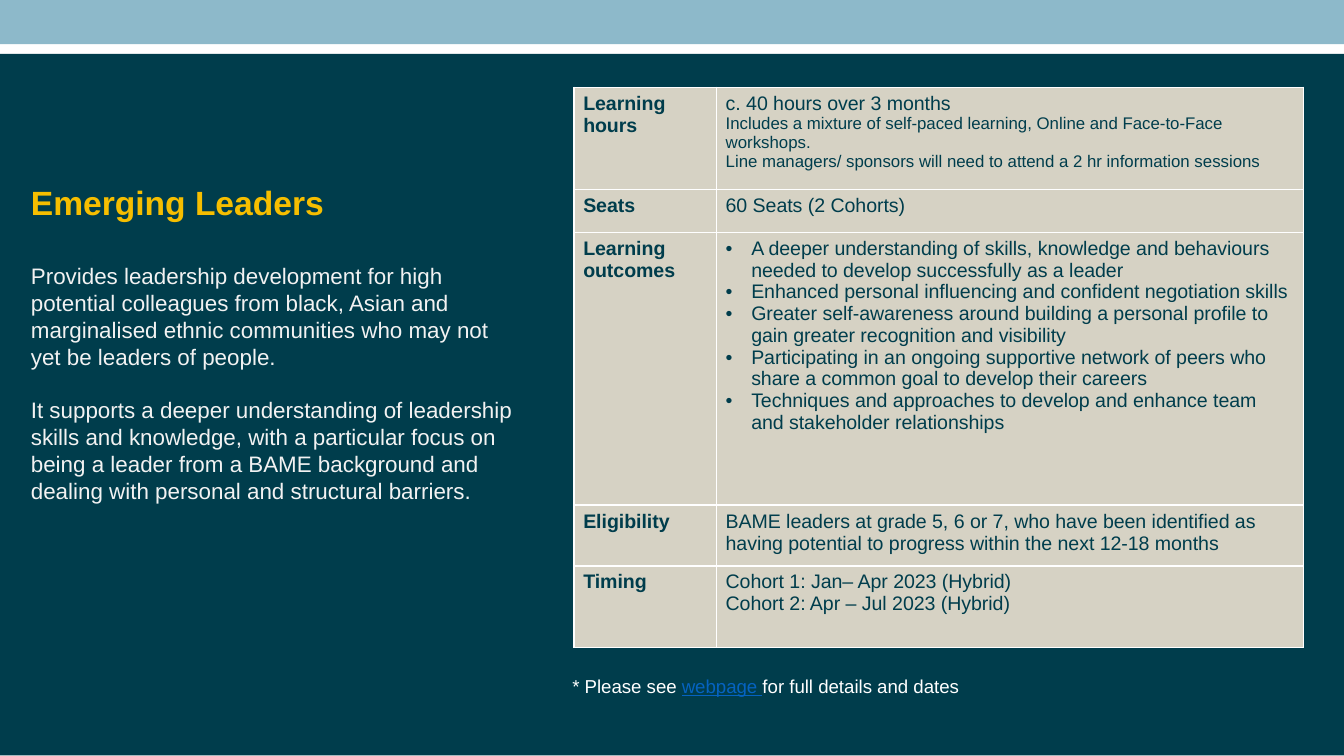
"""Build the Emerging Leaders programme slide."""
from dataclasses import dataclass

from lxml.etree import SubElement
from pptx import Presentation
from pptx.dml.color import RGBColor
from pptx.enum.shapes import MSO_SHAPE
from pptx.enum.text import MSO_ANCHOR, PP_ALIGN
from pptx.oxml.ns import qn
from pptx.util import Inches, Pt


@dataclass(frozen=True)
class Theme:
    font: str = "Arial"
    banner: str = "8DB9CA"
    navy: str = "003D4C"
    stone: str = "D6D2C4"
    gold: str = "F6BE00"
    pale: str = "F2F2F2"
    white: str = "FFFFFF"
    link: str = "0563C1"
    title_size: float = 18
    body_size: float = 12
    table_size: float = 10.5
    detail_size: float = 9
    note_size: float = 10


THEME = Theme()
TITLE = "Emerging Leaders"
DESCRIPTION = [
    "Provides leadership development for high potential colleagues from black, Asian and "
    "marginalised ethnic communities who may not yet be leaders of people.",
    "It supports a deeper understanding of leadership skills and knowledge, with a particular "
    "focus on being a leader from a BAME background and dealing with personal and structural barriers.",
]
HOURS = [
    "c. 40 hours over 3 months",
    "Includes a mixture of self-paced learning, Online and Face-to-Face workshops.",
    "Line managers/ sponsors will need to attend a 2 hr information sessions",
]
OUTCOMES = [
    "A deeper understanding of skills, knowledge and behaviours needed to develop successfully as a leader  ",
    "Enhanced personal influencing and confident negotiation skills ",
    "Greater self-awareness around building a personal profile to gain greater recognition and visibility ",
    "Participating in an ongoing supportive network of peers who share a common goal to develop their careers ",
    "Techniques and approaches to develop and enhance team and stakeholder relationships ",
]
ELIGIBILITY = [
    "BAME leaders at grade 5, 6 or 7, who have been identified as having potential to progress "
    "within the next 12-18 months"
]
TIMING = ["Cohort 1: Jan– Apr 2023 (Hybrid)\vCohort 2: Apr – Jul 2023 (Hybrid)"]
ROWS = [
    ("Learning hours", HOURS, 0.76),
    ("Seats", ["60 Seats (2 Cohorts)"], 0.32),
    ("Learning outcomes", OUTCOMES, 2.03),
    ("Eligibility", ELIGIBILITY, 0.45),
    ("Timing", TIMING, 0.61),
]
COLUMN_WIDTHS = [1.06, 4.37]
NOTE = [("* Please see ", False), ("webpage ", True), ("for full details and dates", False)]
BANDS = [((0, 0, 10, 0.33), THEME.banner), ((0, 0.4, 10, 5.22), THEME.navy)]


def style(font, size, color, bold=False):
    font.name = THEME.font
    font.size = Pt(size)
    font.bold = bold
    font.color.rgb = RGBColor.from_string(color)


def set_bullet(paragraph, indent=0.0):
    properties = paragraph._p.get_or_add_pPr()
    properties.set("marL", str(Inches(indent)))
    properties.set("indent", str(-Inches(indent)))
    if indent:
        SubElement(properties, qn("a:buFont"), typeface=THEME.font)
        SubElement(properties, qn("a:buChar"), char="•")
    else:
        SubElement(properties, qn("a:buNone"))


def write(frame, texts, size, color, bold=False, indent=0.0):
    for index, text in enumerate(texts):
        paragraph = frame.paragraphs[0] if index == 0 else frame.add_paragraph()
        paragraph.text = text
        paragraph.alignment = PP_ALIGN.LEFT
        paragraph.space_before = Pt(0)
        set_bullet(paragraph, indent)
        style(paragraph.font, size, color, bold)


def place(shape, left, top, width, height):
    shape.left, shape.top, shape.width, shape.height = map(Inches, (left, top, width, height))
    shape.text_frame.word_wrap = True
    shape.text_frame.vertical_anchor = MSO_ANCHOR.TOP


def add_bands(slide):
    for position, (box, color) in enumerate(BANDS, start=2):
        shape = slide.shapes.add_shape(MSO_SHAPE.RECTANGLE, *map(Inches, box))
        shape.shadow.inherit = False
        shape.fill.solid()
        shape.fill.fore_color.rgb = RGBColor.from_string(color)
        shape.line.fill.background()
        slide.shapes._spTree.insert(position, shape._element)


def add_introduction(slide):
    title, body = slide.placeholders
    place(title, 0.13, 1.3, 3.88, 0.5)
    write(title.text_frame, [TITLE], THEME.title_size, THEME.gold, True)
    place(body, 0.13, 1.9, 3.82, 1.92)
    write(body.text_frame, DESCRIPTION, THEME.body_size, THEME.pale)
    body.text_frame.paragraphs[1].space_before = Pt(14.4)


def format_cell(cell):
    cell.margin_left = cell.margin_right = Inches(0.07)
    cell.margin_top = cell.margin_bottom = Inches(0.04)
    properties = cell._tc.get_or_add_tcPr()
    for side in ("a:lnL", "a:lnR", "a:lnT", "a:lnB"):
        border = SubElement(properties, qn(side), w=str(Pt(1)))
        SubElement(SubElement(border, qn("a:solidFill")), qn("a:srgbClr"), val=THEME.white)
    cell.fill.solid()
    cell.fill.fore_color.rgb = RGBColor.from_string(THEME.stone)


def add_programme_table(slide):
    heights = [height for _, _, height in ROWS]
    box = (4.27, 0.65, sum(COLUMN_WIDTHS), sum(heights))
    table = slide.shapes.add_table(len(ROWS), len(COLUMN_WIDTHS), *map(Inches, box)).table
    table.first_row = table.horz_banding = False
    for column, width in zip(table.columns, COLUMN_WIDTHS):
        column.width = Inches(width)
    for index, (label, texts, height) in enumerate(ROWS):
        table.rows[index].height = Inches(height)
        label_cell, detail_cell = table.cell(index, 0), table.cell(index, 1)
        format_cell(label_cell)
        format_cell(detail_cell)
        indent = 0.19 if texts is OUTCOMES else 0.0
        write(label_cell.text_frame, [label], THEME.table_size, THEME.navy, True)
        write(detail_cell.text_frame, texts, THEME.table_size, THEME.navy, indent=indent)
    for paragraph in table.cell(0, 1).text_frame.paragraphs[1:]:
        paragraph.font.size = Pt(THEME.detail_size)


def add_note(slide):
    note = slide.shapes.add_textbox(0, 0, 0, 0)
    place(note, 4.16, 4.97, 4.22, 0.27)
    for text, linked in NOTE:
        run = note.text_frame.paragraphs[0].add_run()
        run.text = text
        style(run.font, THEME.note_size, THEME.link if linked else THEME.white)
        run.font.underline = linked


def main():
    presentation = Presentation()
    presentation.slide_width = Inches(10)
    presentation.slide_height = presentation.slide_width * 9 // 16
    slide = presentation.slides.add_slide(presentation.slide_layouts[1])
    add_bands(slide)
    add_introduction(slide)
    add_programme_table(slide)
    add_note(slide)
    presentation.save("out.pptx")


if __name__ == "__main__":
    main()
